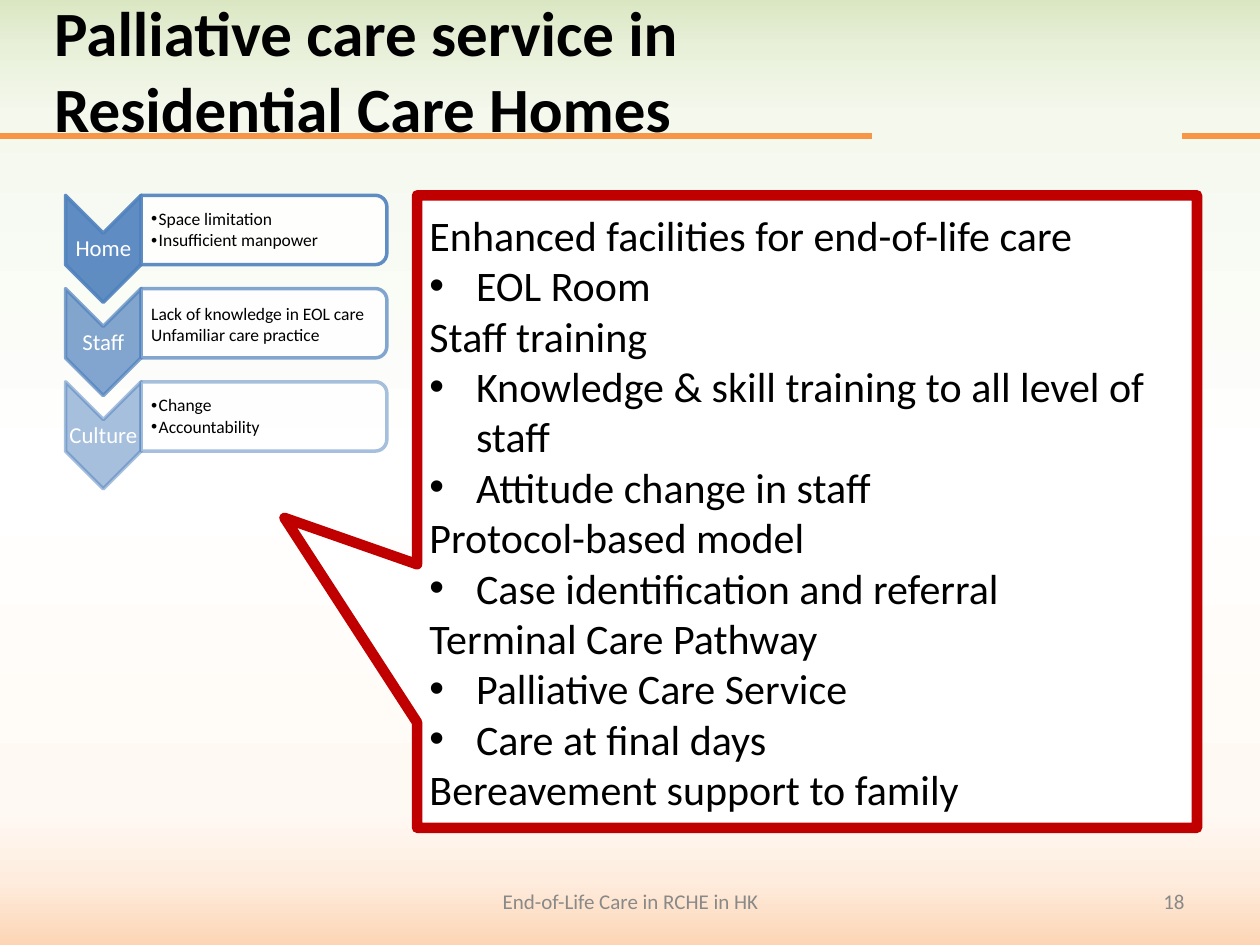
from dataclasses import dataclass

from lxml import etree
from pptx import Presentation
from pptx.dml.color import RGBColor
from pptx.enum.shapes import MSO_CONNECTOR, MSO_SHAPE
from pptx.enum.text import MSO_ANCHOR, MSO_AUTO_SIZE, PP_ALIGN
from pptx.oxml.ns import qn
from pptx.util import Inches, Pt

LEFT, CENTER, RIGHT = PP_ALIGN.LEFT, PP_ALIGN.CENTER, PP_ALIGN.RIGHT
TOP, MIDDLE = MSO_ANCHOR.TOP, MSO_ANCHOR.MIDDLE
RECTANGLE, CHEVRON = MSO_SHAPE.RECTANGLE, MSO_SHAPE.CHEVRON
ROUNDED_END, CALLOUT = MSO_SHAPE.ROUND_2_SAME_RECTANGLE, MSO_SHAPE.RECTANGULAR_CALLOUT
STRAIGHT = MSO_CONNECTOR.STRAIGHT
NO_AUTOFIT = MSO_AUTO_SIZE.NONE


@dataclass(frozen=True)
class Theme:
    """Colours, font and type sizes of the slide."""
    font: str = "Calibri"
    black: str = "000000"
    white: str = "FFFFFF"
    grey: str = "898989"
    blue: str = "4F81BD"
    orange: str = "F79646"
    red: str = "C00000"
    title_size: int = 36
    callout_size: int = 24
    label_size: int = 13
    footer_size: int = 12
    detail_size: int = 10
    gradient: tuple = ((0, "FCD5B5"), (7, "FEEDDF"), (14, "FFF9F4"), (50, "FFFFFF"),
                       (87, "F4F8ED"), (94, "E8F0D9"), (100, "D7E4BD"))


THEME = Theme()

BARRIERS = (
    ("Home", 90, True, ("Space limitation", "Insufficient manpower")),
    ("Staff", 70, False, ("Lack of knowledge in EOL care", "Unfamiliar care practice")),
    ("Culture", 50, True, ("Change", "Accountability")),
)

SERVICES = (
    ("Enhanced facilities for end-of-life care", ("EOL Room",)),
    ("Staff training", ("Knowledge & skill training to all level of staff",
                        "Attitude change in staff")),
    ("Protocol-based model", ("Case identification and referral",)),
    ("Terminal Care Pathway", ("Palliative Care Service", "Care at final days")),
    ("Bereavement support to family", ()),
)


def inches(*lengths):
    """Convert several numbers to lengths."""
    return [Inches(length) for length in lengths]


def apply(target, formats):
    """Set each attribute of a target from a dict."""
    for name, value in formats.items():
        setattr(target, name, value)


def set_alpha(fill_parent, percent):
    """Give the solid colour below an element its opacity."""
    color = fill_parent.find(qn("a:solidFill")).find(qn("a:srgbClr"))
    etree.SubElement(color, qn("a:alpha"), val=str(percent * 1000))


def add_bullet(paragraph, indent):
    """Give a paragraph a hanging round bullet."""
    properties = paragraph._p.get_or_add_pPr()
    properties.set("marL", str(Inches(indent)))
    properties.set("indent", str(-Inches(indent)))
    etree.SubElement(properties, qn("a:buFont"), typeface="Arial")
    etree.SubElement(properties, qn("a:buChar"), char="•")


def write_text(shape, lines, size, color, align=LEFT, anchor=MIDDLE, margins=None,
               bold=False, indent=0.37, spacing=None):
    """Fill a shape with (text, bulleted) lines."""
    frame = shape.text_frame
    apply(frame, {"auto_size": NO_AUTOFIT, "word_wrap": True, "vertical_anchor": anchor})
    sides = ("margin_left", "margin_top", "margin_right", "margin_bottom")
    apply(frame, dict(zip(sides, inches(*(margins or (0.1, 0.05, 0.1, 0.05))))))
    for index, (text, bulleted) in enumerate(lines):
        paragraph = frame.add_paragraph() if index else frame.paragraphs[0]
        apply(paragraph, {"alignment": align, **(spacing or {})})
        if bulleted:
            add_bullet(paragraph, indent)
        run = paragraph.add_run()
        run.text = text
        apply(run.font, {"name": THEME.font, "size": Pt(size), "bold": bold})
        run.font.color.rgb = RGBColor.from_string(color)


def add_text(slide, box, lines, size, color, **formats):
    """Add a text box."""
    write_text(slide.shapes.add_textbox(*inches(*box)), lines, size, color, **formats)


def add_outlined(slide, kind, box, fill, line, width, fill_alpha=100, line_alpha=100):
    """Add a filled preset shape with a round-jointed outline."""
    shape = slide.shapes.add_shape(kind, *inches(*box))
    shape.shadow.inherit = False
    shape.fill.solid()
    shape.fill.fore_color.rgb = RGBColor.from_string(fill)
    shape.line.color.rgb = RGBColor.from_string(line)
    shape.line.width = Pt(width)
    properties = shape._element.spPr
    outline = properties.find(qn("a:ln"))
    set_alpha(properties, fill_alpha)
    set_alpha(outline, line_alpha)
    etree.SubElement(outline, qn("a:round"))
    return shape


def add_background(slide, box):
    """Draw the gradient backdrop."""
    shape = slide.shapes.add_shape(RECTANGLE, *inches(*box))
    shape.shadow.inherit = False
    shape.line.fill.background()
    shape.fill.gradient()
    shape.fill.gradient_angle = 90
    stops = shape._element.spPr.find(qn("a:gradFill")).find(qn("a:gsLst"))
    for stop in list(stops):
        stops.remove(stop)
    for position, color in THEME.gradient:
        stop = etree.SubElement(stops, qn("a:gs"), pos=str(position * 1000))
        etree.SubElement(stop, qn("a:srgbClr"), val=color)


def add_rule(slide, start, end, top):
    """Draw one piece of the rule below the title."""
    rule = slide.shapes.add_connector(STRAIGHT, *inches(start, top, end, top))
    rule.line.color.rgb = RGBColor.from_string(THEME.orange)
    rule.line.width = Pt(3)
    etree.SubElement(rule._element.spPr, qn("a:effectLst"))


def add_footer(slide, top, height):
    """Write the footer and the page number."""
    for left, width, text, align in ((3.42, 3.17, "End-of-Life Care in RCHE in HK", CENTER),
                                     (7.17, 2.33, "18", RIGHT)):
        add_text(slide, (left, top, width, height), [(text, False)],
                 THEME.footer_size, THEME.grey, align=align)


def add_barrier(slide, box, label, alpha, bulleted, details):
    """Draw a downward chevron with its detail panel inside a box."""
    left, top, width, height = box
    chevron_width, panel_height = 0.6, 0.55
    panel_left, panel_width = left + chevron_width, width - chevron_width
    chevron = add_outlined(
        slide, CHEVRON,
        (left + (chevron_width - height) / 2, top + (height - chevron_width) / 2,
         height, chevron_width),
        THEME.blue, THEME.blue, 2, alpha, alpha)
    chevron.rotation = 90
    add_text(slide, (left, top + 0.3, chevron_width, 0.26), [(label, False)],
             THEME.label_size, THEME.white, align=CENTER, margins=(0.01,) * 4,
             spacing={"line_spacing": 0.9})
    panel = add_outlined(
        slide, ROUNDED_END,
        (panel_left + (panel_width - panel_height) / 2,
         top + (panel_height - panel_width) / 2, panel_height, panel_width),
        THEME.white, THEME.blue, 2, 90, alpha)
    panel.rotation = 90
    spacing = {"line_spacing": 0.9, "space_after": Pt(1.5)} if bulleted else None
    add_text(slide, (panel_left, top + 0.03, panel_width - 0.03, 0.5),
             [(detail, bulleted) for detail in details], THEME.detail_size, THEME.black,
             margins=(0.08, 0.01, 0.01, 0.01), indent=0.06, spacing=spacing)


def add_barriers(slide, box, pitch):
    """Stack the barriers down from the top of a box."""
    left, top, width, height = box
    for index, barrier in enumerate(BARRIERS):
        add_barrier(slide, (left, top + index * pitch, width, height), *barrier)


def add_services(slide, box):
    """Draw the callout listing the services."""
    callout = add_outlined(slide, CALLOUT, box, THEME.white, THEME.red, 6)
    callout.adjustments[0], callout.adjustments[1] = -0.67, 0.01
    lines = [line for heading, items in SERVICES
             for line in [(heading, False), *((item, True) for item in items)]]
    write_text(callout, lines, THEME.callout_size, THEME.black)


def place_title(slide, box):
    """Move the title to its box above the other shapes."""
    title = slide.shapes.title
    apply(title, dict(zip(("left", "top", "width", "height"), inches(*box))))
    write_text(title, [("Palliative care service in Residential Care Homes", False)],
               THEME.title_size, THEME.black, anchor=TOP, bold=True)
    title._element.getparent().append(title._element)


def main():
    """Build and save the slide."""
    presentation = Presentation()
    presentation.slide_width, presentation.slide_height = inches(10, 7.5)
    slide = presentation.slides.add_slide(presentation.slide_layouts[5])
    add_background(slide, (0, -0.08, 10, 7.58))
    add_rule(slide, 9.38, 10, 1.08)
    add_rule(slide, 0, 6.92, 1.08)
    add_footer(slide, 6.95, 0.4)
    add_barriers(slide, (0.52, 1.55, 2.55, 0.85), 0.74)
    add_services(slide, (3.31, 1.55, 6.19, 5.02))
    place_title(slide, (0.33, -0.1, 6.07, 1.31))
    presentation.save("out.pptx")


if __name__ == "__main__":
    main()
